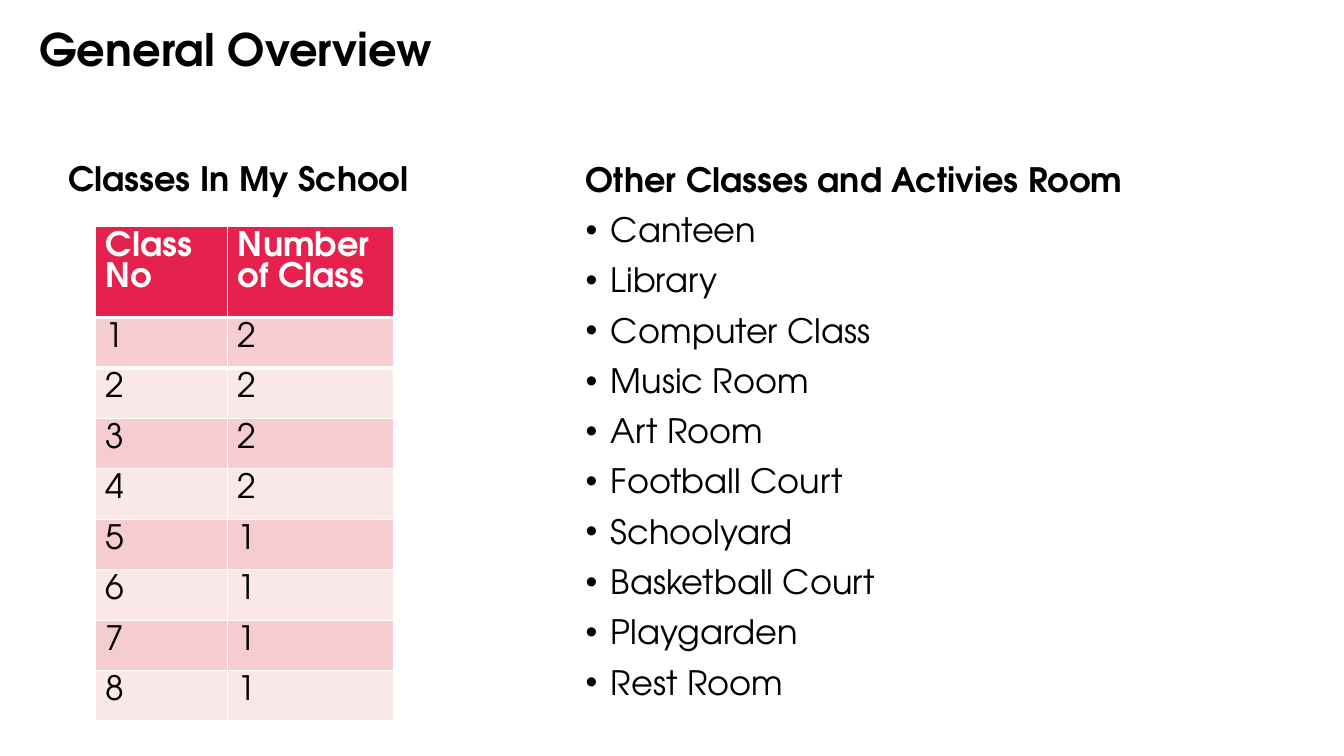
import pptx
import pptx.util
import pptx.dml.color
import pptx.enum.text
from lxml import etree
from pptx.util import Inches, Pt

FONT = "TeX Gyre Adventor"
COLORS = {"text": "000000", "header_text": "FFFFFF", "header": "E5224E",
          "band_dark": "F5CDD0", "band_light": "FAE8E9", "border": "FFFFFF"}
CLASS_COUNTS = [2, 2, 2, 2, 1, 1, 1, 1]
ROOMS = ["Canteen", "Library", "Computer Class", "Music Room", "Art Room",
         "Football Court", "Schoolyard", "Basketball Court", "Playgarden",
         "Rest Room"]


def rgb(name):
    return pptx.dml.color.RGBColor.from_string(COLORS[name])


def add_element(parent, tag, **attributes):
    return etree.SubElement(parent, pptx.oxml.ns.qn(tag), attributes)


def style_runs(p, size=24, bold=False, color="text"):
    for r in p.runs:
        r.font.name = FONT
        r.font.size = Pt(size)
        r.font.bold = bold
        r.font.color.rgb = rgb(color)


def add_bullet(p):
    pPr = p._p.get_or_add_pPr()
    pPr.set("marL", str(Inches(0.25)))
    pPr.set("indent", str(-Inches(0.25)))
    add_element(pPr, "a:buFont", typeface="Arial")
    add_element(pPr, "a:buChar", char="•")


def add_border(cell, side, width):
    """Draw one cell border; call before the cell gets its fill."""
    ln = add_element(cell._tc.get_or_add_tcPr(), side, w=str(Pt(width)))
    fill = add_element(ln, "a:solidFill")
    add_element(fill, "a:srgbClr", val=COLORS["border"])


def set_title(s, text):
    sp = s.shapes.title
    sp.left, sp.top = Inches(0.29), Inches(0.17)
    sp.width, sp.height = Inches(10.45), Inches(0.64)
    tf = sp.text_frame
    tf.text = text
    tf.auto_size = pptx.enum.text.MSO_AUTO_SIZE.NONE
    tf.vertical_anchor = pptx.enum.text.MSO_ANCHOR.TOP
    p = tf.paragraphs[0]
    p.alignment = pptx.enum.text.PP_ALIGN.LEFT
    p.line_spacing = 1.0
    style_runs(p, size=32, bold=True)


def add_section(s, left, top, width, height, heading, items=()):
    """Add a bold heading followed by optional bulleted items."""
    sp = s.shapes.add_textbox(Inches(left), Inches(top), Inches(width), Inches(height))
    tf = sp.text_frame
    tf.word_wrap = True
    p = tf.paragraphs[0]
    p.text = heading
    p.line_spacing = 0.9
    style_runs(p, bold=True)
    for item in items:
        p = tf.add_paragraph()
        p.text = item
        p.line_spacing = 0.9
        p.space_before = Pt(10)
        add_bullet(p)
        style_runs(p)


def add_class_table(s):
    rows = [("Class No", "Number of Class")]
    rows += [(str(n), str(count)) for n, count in enumerate(CLASS_COUNTS, 1)]
    table = s.shapes.add_table(len(rows), 2, Inches(0.95), Inches(2.25),
                               Inches(2.95), Inches(4.9)).table
    table.columns[0].width = Inches(1.31)
    table.columns[1].width = Inches(1.64)
    for i, values in enumerate(rows):
        header = i == 0
        table.rows[i].height = Inches(0.9 if header else 0.5)
        fill = "header" if header else "band_dark" if i % 2 else "band_light"
        for j, value in enumerate(values):
            cell = table.cell(i, j)
            if i <= 1:
                add_border(cell, "a:lnB" if header else "a:lnT", 3)
            cell.fill.solid()
            cell.fill.fore_color.rgb = rgb(fill)
            cell.text = value
            style_runs(cell.text_frame.paragraphs[0], bold=header,
                       color="header_text" if header else "text")


def main():
    prs = pptx.Presentation()
    prs.slide_width, prs.slide_height = Inches(13.33), Inches(7.5)
    s = prs.slides.add_slide(prs.slide_layouts[5])
    set_title(s, "General Overview")
    add_section(s, 0.58, 1.56, 3.67, 0.47, "Classes In My School")
    add_class_table(s)
    add_section(s, 5.71, 1.57, 6.04, 5.57, "Other Classes and Activies Room", ROOMS)
    prs.save("out.pptx")


if __name__ == "__main__":
    main()
